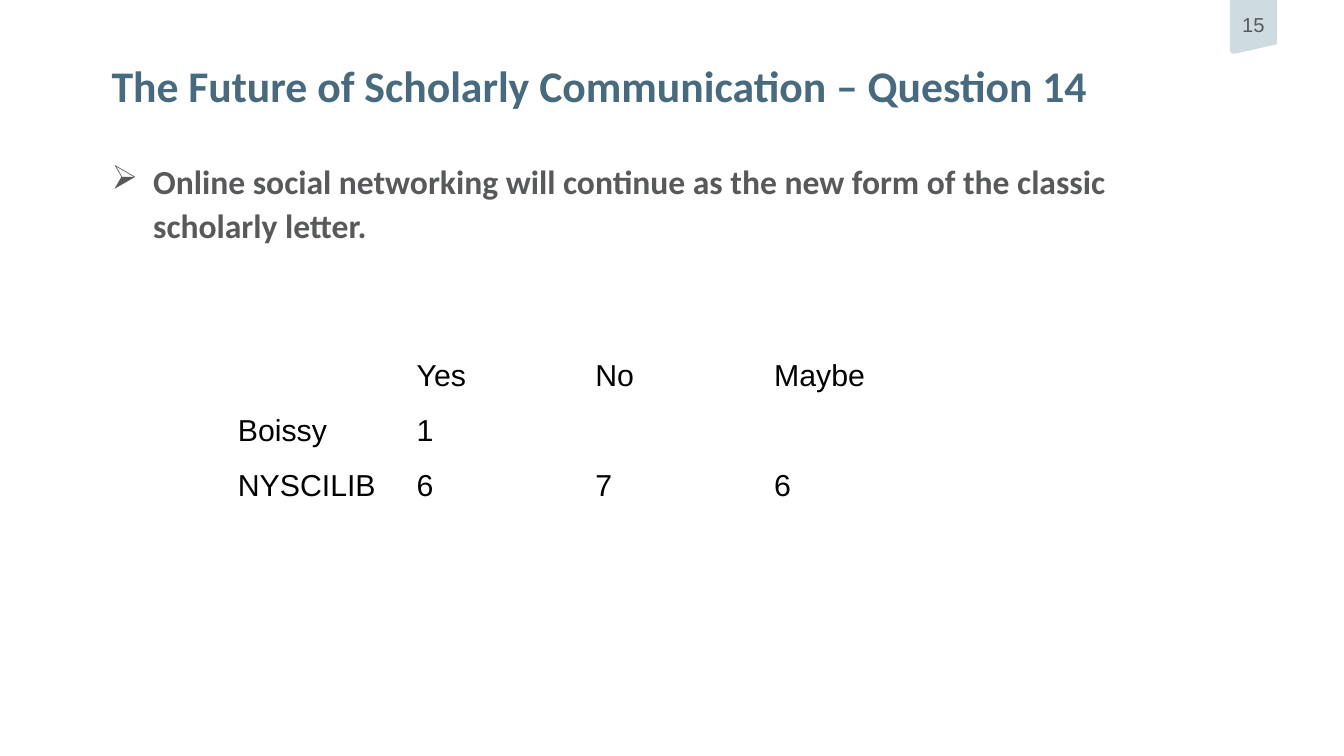
from lxml import etree
from pptx import Presentation
from pptx.dml.color import RGBColor
from pptx.enum.text import MSO_ANCHOR, PP_ALIGN
from pptx.oxml.ns import qn
from pptx.util import Inches, Pt

SLATE, GRAY, PALE, BLACK = "486A7E", "58595B", "CEDBE0", "000000"
HEADING_FONT, BODY_FONT, BULLET_FONT = "Calibri", "Arial", "Wingdings"
ARROW = "Ø"  # an arrowhead in the bullet font


def color(hex_value):
    return RGBColor.from_string(hex_value)


class SlideBuilder:
    def __init__(self, slide):
        self.slide = slide

    def style(self, paragraph, size, hex_value, name=BODY_FONT, bold=False):
        font = paragraph.font
        font.size, font.name, font.bold = Pt(size), name, bold
        font.color.rgb = color(hex_value)

    def frame(self, shape, bottom=0):
        frame = shape.text_frame
        frame.word_wrap = True
        frame.margin_left = frame.margin_right = frame.margin_top = 0
        frame.margin_bottom = Inches(bottom)
        return frame

    def bullet(self, paragraph, character, hex_value, indent):
        properties = paragraph._p.get_or_add_pPr()
        properties.set("marL", str(Inches(indent)))
        properties.set("indent", str(-Inches(indent)))
        bullet_color = etree.SubElement(properties, qn("a:buClr"))
        etree.SubElement(bullet_color, qn("a:srgbClr"), val=hex_value)
        etree.SubElement(properties, qn("a:buFont"), typeface=BULLET_FONT,
                         pitchFamily="2", charset="2")
        etree.SubElement(properties, qn("a:buChar"), char=character)

    def text(self, box, text, size, hex_value, bullet=None):
        shape = self.slide.shapes.add_textbox(*map(Inches, box))
        frame = self.frame(shape)
        frame.vertical_anchor = MSO_ANCHOR.TOP
        paragraph = frame.paragraphs[0]
        paragraph.text = text
        if bullet:
            paragraph.line_spacing = 1.07
            self.bullet(paragraph, bullet, hex_value, 0.31)
        self.style(paragraph, size, hex_value, HEADING_FONT, True)

    def page_tab(self, points, number):
        start, *others = [(Inches(x), Inches(y)) for x, y in points]
        builder = self.slide.shapes.build_freeform(*start)
        builder.add_line_segments(others, close=True)
        shape = builder.convert_to_shape()
        shape.shadow.inherit = False
        shape.fill.solid()
        shape.fill.fore_color.rgb = color(PALE)
        shape.line.fill.background()
        frame = self.frame(shape, bottom=0.04)
        frame.vertical_anchor = MSO_ANCHOR.MIDDLE
        paragraph = frame.paragraphs[0]
        paragraph.text = number
        paragraph.alignment = PP_ALIGN.CENTER
        self.style(paragraph, 10.8, GRAY)

    def table(self, left, top, column_width, row_height, rows):
        columns = len(rows[0])
        table = self.slide.shapes.add_table(
            len(rows), columns, Inches(left), Inches(top),
            Inches(column_width * columns), Inches(row_height * len(rows))).table
        table.first_row = table.horz_banding = False
        for column in table.columns:
            column.width = Inches(column_width)
        for row, values in zip(table.rows, rows):
            row.height = Inches(row_height)
            for cell, value in zip(row.cells, values):
                cell.fill.background()
                cell.text = value
                self.style(cell.text_frame.paragraphs[0], 16.2, BLACK)


def main():
    # Widescreen slide, 16 to 9
    presentation = Presentation()
    presentation.slide_width = Inches(10)
    presentation.slide_height = Inches(10) * 9 // 16
    builder = SlideBuilder(
        presentation.slides.add_slide(presentation.slide_layouts[6]))

    # Page number tab
    builder.page_tab([(9.15, 0), (9.5, 0), (9.5, 0.33), (9.19, 0.4),
                      (9.17, 0.4), (9.15, 0.38)], "15")

    # Question and title
    builder.text((0.83, 1.18, 8.32, 0.92),
                 "Online social networking will continue as the new form of "
                 "the classic scholarly letter.", 18, GRAY, bullet=ARROW)
    builder.text((0.83, 0.44, 8.32, 0.3),
                 "The Future of Scholarly Communication – Question 14", 23.4, SLATE)

    # Survey answers
    builder.table(1.67, 2.62, 1.33, 0.41, [
        ["", "Yes", "No", "Maybe"],
        ["Boissy", "1", "", ""],
        ["NYSCILIB", "6", "7", "6"],
    ])

    presentation.save("out.pptx")


if __name__ == "__main__":
    main()
